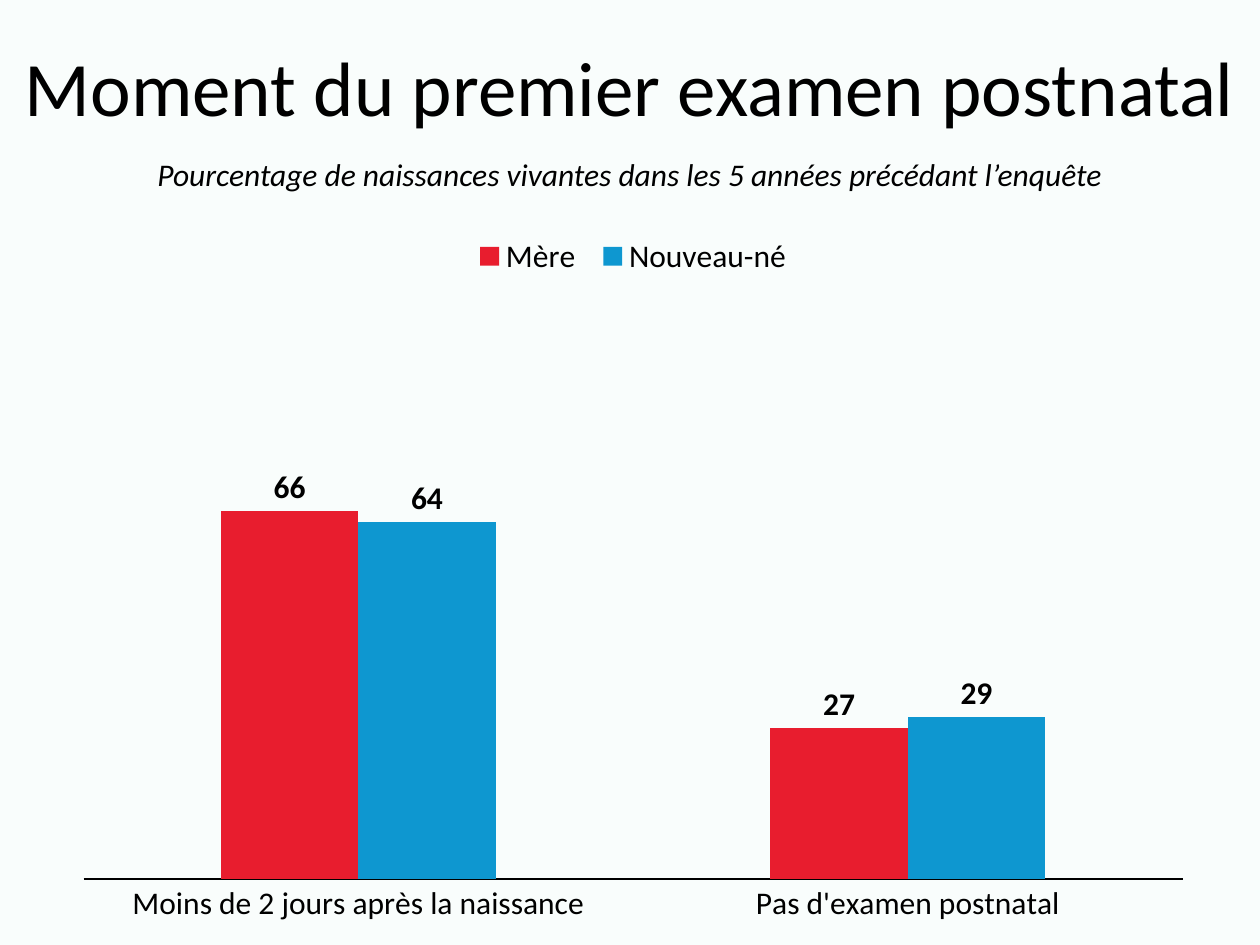
from dataclasses import dataclass

from lxml.etree import SubElement
from pptx import Presentation
from pptx.chart.chart import Chart
from pptx.chart.data import CategoryChartData
from pptx.dml.color import RGBColor
from pptx.enum.chart import XL_CHART_TYPE, XL_LABEL_POSITION, XL_LEGEND_POSITION, XL_TICK_MARK
from pptx.enum.text import MSO_ANCHOR, MSO_AUTO_SIZE, PP_ALIGN
from pptx.oxml.ns import qn
from pptx.text.text import Font
from pptx.util import Inches, Pt

BLACK = RGBColor(0x00, 0x00, 0x00)
RED = RGBColor(0xE8, 0x1D, 0x2E)
BLUE = RGBColor(0x0E, 0x97, 0xD0)
PALE_MINT = RGBColor(0xF9, 0xFD, 0xFC)


@dataclass(frozen=True)
class Group:
    name: str
    percentages: tuple[int, int]
    color: RGBColor


MOMENTS = ("Moins de 2 jours après la naissance", "Pas d'examen postnatal")
GROUPS = (
    Group("Mère ", (66, 27), RED),
    Group("Nouveau-né", (64, 29), BLUE),
)


def style_font(font: Font, size: int, bold: bool = False, italic: bool = False) -> None:
    font.name = "Calibri"
    font.size = Pt(size)
    font.bold = bold
    font.italic = italic
    font.color.rgb = BLACK


def place_plot(chart: Chart, x: float, y: float, w: float, h: float) -> None:
    plot_area = chart._chartSpace.chart.plotArea
    layout = plot_area.find(qn("c:layout"))
    if layout is None:
        layout = SubElement(plot_area, qn("c:layout"))
        plot_area.insert(0, layout)
    manual = SubElement(layout, qn("c:manualLayout"))
    settings = {"layoutTarget": "inner", "xMode": "edge", "yMode": "edge",
                "x": x, "y": y, "w": w, "h": h}
    for tag, value in settings.items():
        SubElement(manual, qn(f"c:{tag}")).set("val", str(value))


def style_axes(chart: Chart) -> None:
    moments = chart.category_axis
    moments.major_tick_mark = XL_TICK_MARK.NONE
    moments.minor_tick_mark = XL_TICK_MARK.NONE
    moments.format.line.color.rgb = BLACK
    moments.format.line.width = Pt(0.75)
    style_font(moments.tick_labels.font, 18)
    percentages = chart.value_axis
    percentages.minimum_scale = 0
    percentages.maximum_scale = 100
    percentages.has_major_gridlines = False
    percentages.visible = False


def style_series(chart: Chart) -> None:
    plot = chart.plots[0]
    plot.gap_width = 200
    plot.overlap = 0
    plot.vary_by_categories = False
    for series, group in zip(plot.series, GROUPS):
        series.format.fill.solid()
        series.format.fill.fore_color.rgb = group.color
        series.invert_if_negative = False
        labels = series.data_labels
        labels.show_value = True
        labels.position = XL_LABEL_POSITION.OUTSIDE_END
        style_font(labels.font, 18, bold=True)


def main() -> None:
    presentation = Presentation()
    presentation.slide_width = Inches(10)
    presentation.slide_height = Inches(7.5)
    slide = presentation.slides.add_slide(presentation.slide_layouts[5])
    slide.background.fill.solid()
    slide.background.fill.fore_color.rgb = PALE_MINT

    title = slide.shapes.title
    title.left, title.top = Inches(0), Inches(0)
    title.width, title.height = Inches(10), Inches(1.45)
    title.text_frame.text = "Moment du premier examen postnatal"
    title.text_frame.vertical_anchor = MSO_ANCHOR.MIDDLE
    heading = title.text_frame.paragraphs[0]
    heading.alignment = PP_ALIGN.CENTER
    heading.line_spacing = 0.9
    style_font(heading.runs[0].font, 44)

    data = CategoryChartData(number_format="0")
    data.categories = MOMENTS
    for group in GROUPS:
        data.add_series(group.name, group.percentages)
    chart = slide.shapes.add_chart(
        XL_CHART_TYPE.COLUMN_CLUSTERED,
        Inches(0.51), Inches(1.76), Inches(9.03), Inches(5.74), data,
    ).chart
    style_font(chart.font, 10)
    chart.has_title = False
    chart.has_legend = True
    chart.legend.position = XL_LEGEND_POSITION.TOP
    chart.legend.include_in_layout = False
    style_font(chart.legend.font, 18)
    style_axes(chart)
    style_series(chart)
    place_plot(chart, 0.017, 0.138, 0.966, 0.771)

    subtitle = slide.shapes.add_textbox(Inches(0), Inches(1.18), Inches(10), Inches(0.4))
    subtitle.text_frame.word_wrap = True
    subtitle.text_frame.auto_size = MSO_AUTO_SIZE.SHAPE_TO_FIT_TEXT
    subtitle.text_frame.text = (
        "Pourcentage de naissances vivantes dans les 5 années précédant l’enquête"
    )
    measure = subtitle.text_frame.paragraphs[0]
    measure.alignment = PP_ALIGN.CENTER
    style_font(measure.runs[0].font, 18, italic=True)

    presentation.save("out.pptx")


if __name__ == "__main__":
    main()
